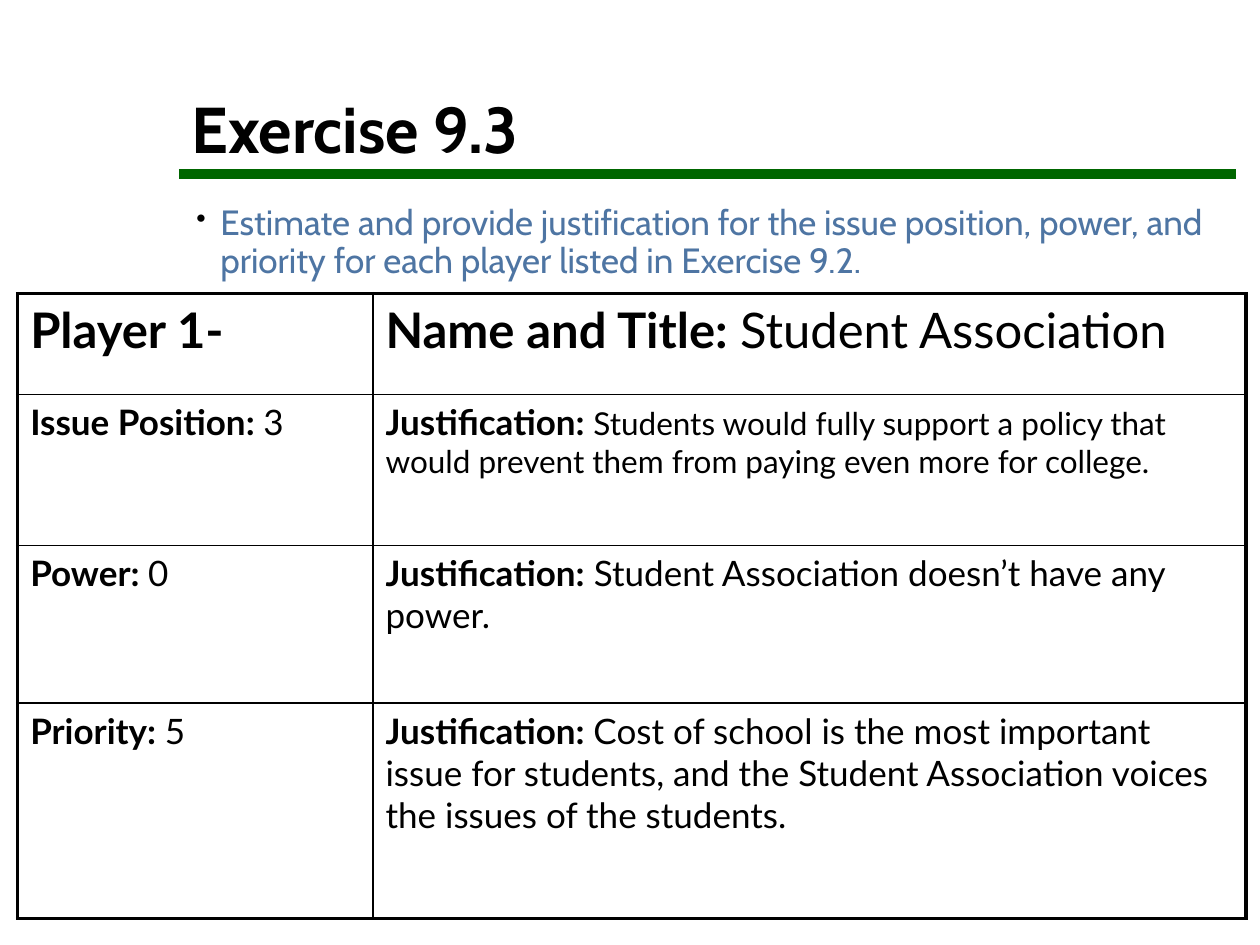
import pptx
import pptx.dml.color
import pptx.enum.shapes
import pptx.enum.text
import pptx.oxml
import pptx.oxml.ns
import pptx.util
from pptx.util import Inches

COLORS = {"ink": "000000", "rule": "006600", "prompt": "4E75A3"}
HEADING_FONT, TABLE_FONT = "Cabin", "Lato"
THICK, THIN = 2.25, 1
COLUMN_WIDTHS = [2.82, 6.93]
ROW_HEIGHTS = [0.8, 1.2, 1.25, 1.71]
# Each cell is (bold label, plain answer, answer size); the label size is set per row.
PLAYER_ROWS = [
    (28, [("Player 1-", "", 28),
          ("Name and Title:", " Student Association", 28)]),
    (20, [("Issue Position: ", "3", 20),
          ("Justification: ", "Students would fully support a policy that would "
           "prevent them from paying even more for college.", 18)]),
    (20, [("Power: ", "0", 20),
          ("Justification:", " Student Association doesn’t have any power.", 20)]),
    (20, [("Priority: ", "5", 20),
          ("Justification: ", "Cost of school is the most important issue for students, "
           "and the Student Association voices the issues of the students.", 20)]),
]


def rgb(name):
    return pptx.dml.color.RGBColor.from_string(COLORS[name])


def add_text(paragraph, text, size=20, font=TABLE_FONT, color="ink", bold=False):
    run = paragraph.add_run()
    run.text = text
    run.font.size = pptx.util.Pt(size)
    run.font.name = font
    run.font.bold = bold
    run.font.color.rgb = rgb(color)


def xml_element(tag, content="", **attributes):
    listed = "".join(f' {key}="{value}"' for key, value in attributes.items())
    namespace = pptx.oxml.ns.nsdecls("a")
    return pptx.oxml.parse_xml(f"<a:{tag} {namespace}{listed}>{content}</a:{tag}>")


def add_bullet(paragraph, margin, hanging):
    properties = paragraph._p.get_or_add_pPr()
    properties.set("marL", str(margin))
    properties.set("indent", str(-hanging))
    properties.append(xml_element("buClr", f'<a:srgbClr val="{COLORS["ink"]}"/>'))
    properties.append(xml_element("buSzPct", val=80000))
    properties.append(xml_element("buChar", char="•"))


def set_borders(cell, **widths):
    """Draw the cell's sides; widths are points keyed L, R, T and B."""
    properties = cell._tc.get_or_add_tcPr()
    line_fill = f'<a:solidFill><a:srgbClr val="{COLORS["ink"]}"/></a:solidFill>'
    for side in "LRTB":
        properties.append(xml_element(f"ln{side}", line_fill, w=pptx.util.Pt(widths[side])))


def add_heading(slide, left, top, width, height):
    title = slide.shapes.title
    title.left, title.top, title.width, title.height = left, top, width, height
    frame = title.text_frame
    frame.auto_size = pptx.enum.text.MSO_AUTO_SIZE.NONE
    frame.vertical_anchor = pptx.enum.text.MSO_ANCHOR.BOTTOM
    paragraph = frame.paragraphs[0]
    paragraph.alignment = pptx.enum.text.PP_ALIGN.LEFT
    paragraph.line_spacing = 0.9
    add_text(paragraph, "Exercise 9.3", size=37, font=HEADING_FONT, bold=True)

    rule = slide.shapes.add_connector(pptx.enum.shapes.MSO_CONNECTOR.STRAIGHT,
                                      left, top + height, left + width, top + height)
    rule.line.color.rgb = rgb("rule")
    rule.line.width = pptx.util.Pt(6)
    rule._element.spPr.append(xml_element("effectLst"))


def add_prompt(slide, left, top, width, height):
    frame = slide.shapes.add_textbox(left, top, width, height).text_frame
    frame.word_wrap = True
    paragraph = frame.paragraphs[0]
    paragraph.line_spacing = 0.9
    add_bullet(paragraph, margin=Inches(0.23), hanging=Inches(0.19))
    add_text(paragraph, "Estimate and provide justification for the issue position, power, "
             "and priority for each player listed in Exercise 9.2.",
             font=HEADING_FONT, color="prompt")


def add_player_table(slide, left, top, width, height):
    last_row, last_column = len(ROW_HEIGHTS) - 1, len(COLUMN_WIDTHS) - 1
    table = slide.shapes.add_table(last_row + 1, last_column + 1,
                                   left, top, width, height).table
    table.first_row = table.horz_banding = False
    for column, column_width in zip(table.columns, COLUMN_WIDTHS):
        column.width = Inches(column_width)
    for row, row_height in zip(table.rows, ROW_HEIGHTS):
        row.height = Inches(row_height)

    for r, (label_size, answers) in enumerate(PLAYER_ROWS):
        for c, (label, answer, answer_size) in enumerate(answers):
            cell = table.cell(r, c)
            set_borders(cell,
                        L=THICK if c == 0 else THIN,
                        R=THICK if c == last_column else THIN,
                        T=THICK if r == 0 else THIN,
                        B=THICK if r == last_row else THIN)
            cell.fill.background()
            paragraph = cell.text_frame.paragraphs[0]
            add_text(paragraph, label, size=label_size, bold=True)
            if answer:
                add_text(paragraph, answer, size=answer_size)


def main():
    presentation = pptx.Presentation()
    presentation.slide_width, presentation.slide_height = Inches(10), Inches(7.5)
    slide = presentation.slides.add_slide(presentation.slide_layouts.get_by_name("Title Only"))
    add_heading(slide, Inches(1.42), Inches(0.25), Inches(8.39), Inches(1.13))
    add_prompt(slide, Inches(1.42), Inches(1.58), Inches(8.39), Inches(0.7))
    add_player_table(slide, Inches(0.14), Inches(2.33),
                     Inches(sum(COLUMN_WIDTHS)), Inches(sum(ROW_HEIGHTS)))
    presentation.save("out.pptx")


if __name__ == "__main__":
    main()
